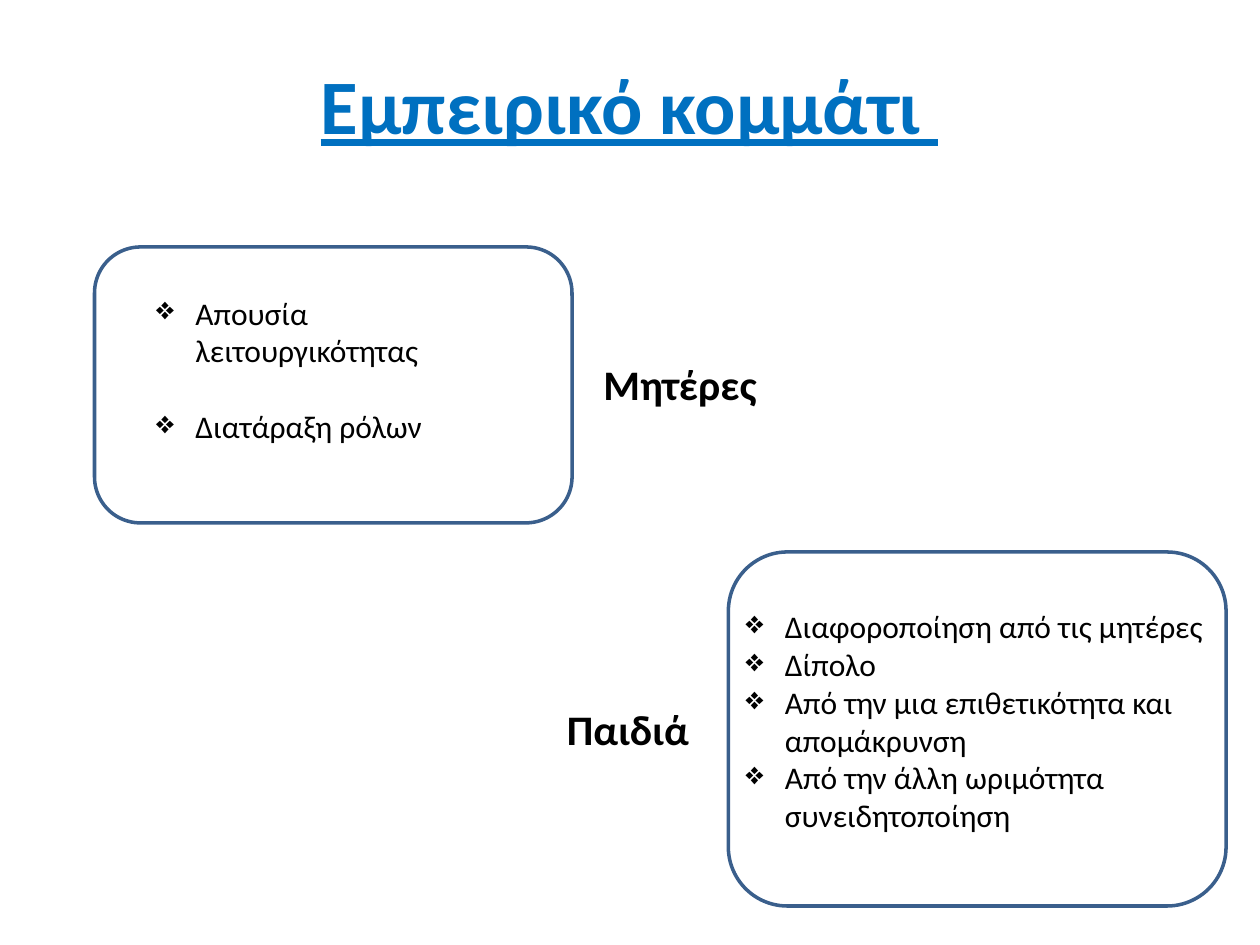
from typing import NamedTuple

from lxml.etree import SubElement
from pptx import Presentation
from pptx.dml.color import RGBColor
from pptx.enum.shapes import MSO_SHAPE
from pptx.enum.text import MSO_ANCHOR, MSO_AUTO_SIZE, PP_ALIGN
from pptx.oxml.ns import qn
from pptx.util import Pt

COLOURS = {"white": "FFFFFF", "outline": "3A5F8C", "text": "000000", "title": "0070C0"}
FONT = "Calibri"
BULLET_INDENT = Pt(22.5)


class Area(NamedTuple):
    left: float
    top: float
    width: float
    height: float


class Group(NamedTuple):
    name: str
    label_area: Area
    frame_area: Area
    list_area: Area
    findings: list[str]
    gap: float  # space between findings


TITLE_AREA = Area(116, 29.5, 487.5, 60.5)
GROUPS = [
    Group("Μητέρες", Area(337.7, 201.6, 181.4, 36), Area(54, 141.1, 272.9, 157.7),
          Area(82.1, 164.2, 226.8, 94.3),
          ["Απουσία λειτουργικότητας", "Διατάραξη ρόλων"], 21.6),
    Group("Παιδιά", Area(316.8, 398.2, 102.2, 36), Area(416.2, 315.4, 284.4, 202.3),
          Area(419, 343.4, 277.9, 138.2),
          ["Διαφοροποίηση από τις μητέρες", "Δίπολο",
           "Από την μια επιθετικότητα και απομάκρυνση",
           "Από την άλλη ωριμότητα συνειδητοποίηση"], 0),
]


def colour(name: str) -> RGBColor:
    return RGBColor.from_string(COLOURS[name])


def place(shape, area: Area) -> None:
    shape.left, shape.top, shape.width, shape.height = map(Pt, area)


def add_bullet(para) -> None:
    properties = para._p.get_or_add_pPr()
    properties.set("marL", str(BULLET_INDENT))
    properties.set("indent", str(-BULLET_INDENT))
    SubElement(properties, qn("a:buChar")).set("char", "❖")


def write(box, lines: list[str], *, size: float, ink: str = "text", bold: bool = False,
          underline: bool = False, align=PP_ALIGN.LEFT, bullets: bool = False,
          gap: float = 0) -> None:
    frame = box.text_frame
    frame.word_wrap = True
    frame.auto_size = MSO_AUTO_SIZE.NONE
    frame.vertical_anchor = MSO_ANCHOR.TOP
    for index, line in enumerate(lines):
        para = frame.add_paragraph() if index else frame.paragraphs[0]
        para.alignment = align
        if index and gap:
            para.space_before = Pt(gap)
        if bullets:
            add_bullet(para)
        span = para.add_run()
        span.text = line
        font = span.font
        font.name, font.size, font.bold = FONT, Pt(size), bold
        font.underline = underline
        font.color.rgb = colour(ink)


def draw_group(page, group: Group) -> None:
    # Rounded frame
    frame = page.shapes.add_shape(MSO_SHAPE.ROUNDED_RECTANGLE, *map(Pt, group.frame_area))
    frame.shadow.inherit = False
    frame.fill.solid()
    frame.fill.fore_color.rgb = colour("white")
    frame.line.color.rgb = colour("outline")
    frame.line.width = Pt(2)

    # Findings and group label
    findings = page.shapes.add_textbox(*map(Pt, group.list_area))
    write(findings, group.findings, size=18, bullets=True, gap=group.gap)
    label = page.shapes.add_textbox(*map(Pt, group.label_area))
    write(label, [group.name], size=24, bold=True)


def main() -> None:
    deck = Presentation()
    deck.slide_width, deck.slide_height = Pt(720), Pt(540)
    page = deck.slides.add_slide(deck.slide_layouts[5])

    # Title
    title = page.shapes.title
    place(title, TITLE_AREA)
    write(title, ["Εμπειρικό κομμάτι "], size=44, ink="title", bold=True,
          underline=True, align=PP_ALIGN.CENTER)

    # Mothers and children
    for group in GROUPS:
        draw_group(page, group)

    deck.save("out.pptx")


if __name__ == "__main__":
    main()
